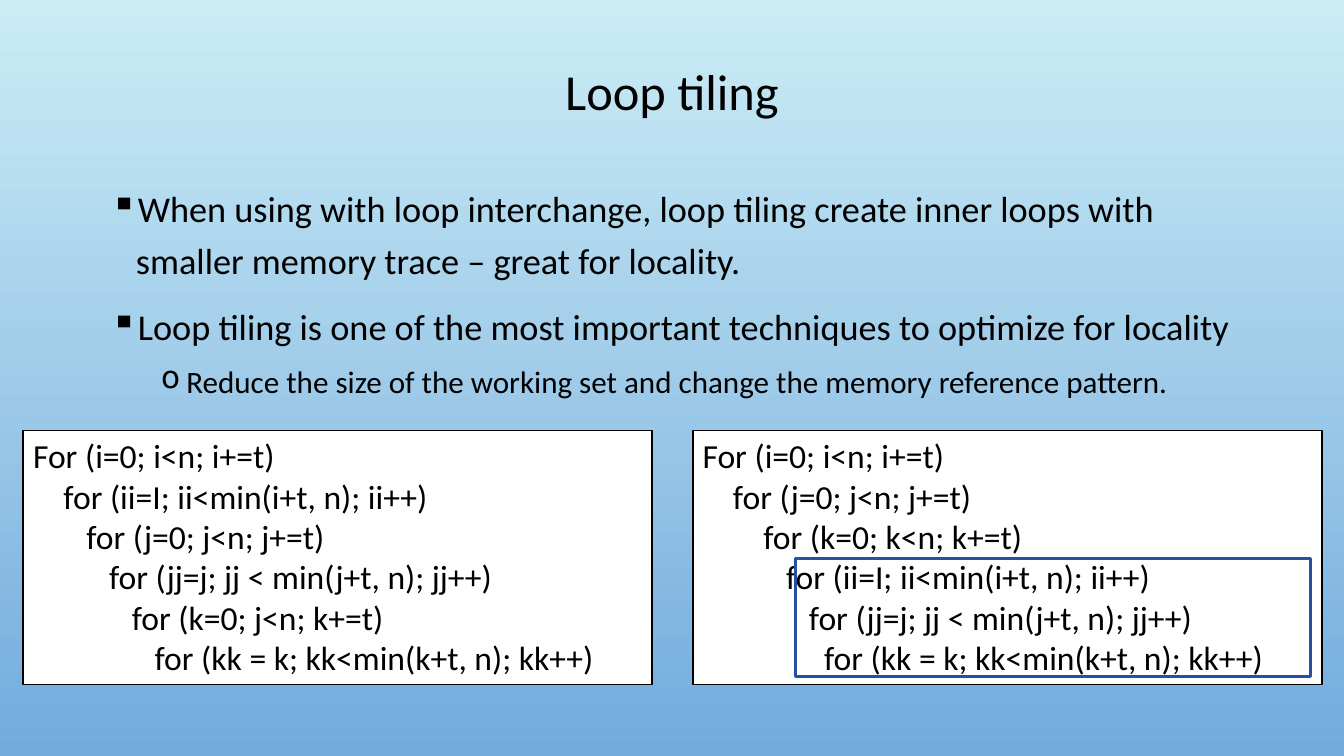
from dataclasses import dataclass

from lxml.etree import SubElement
from pptx import Presentation
from pptx.dml.color import RGBColor
from pptx.enum.shapes import MSO_SHAPE
from pptx.enum.text import MSO_ANCHOR as Anchor, PP_ALIGN as Align
from pptx.oxml.ns import qn
from pptx.slide import Slide
from pptx.util import Inches, Pt

BLACK = RGBColor(0x00, 0x00, 0x00)
WHITE = RGBColor(0xFF, 0xFF, 0xFF)
SKY_TOP = RGBColor(0xCB, 0xEC, 0xF5)
SKY_BOTTOM = RGBColor(0x73, 0xAB, 0xDD)
HIGHLIGHT = RGBColor(0x27, 0x4F, 0xA4)
FONT = "Calibri"


@dataclass(frozen=True)
class Point:
    text: str
    level: int = 0
    size: float = 25.9
    bullet: str = "▪"
    margin: float = 0.25
    space_before: float = 10


@dataclass(frozen=True)
class Listing:
    left: float
    lines: tuple[str, ...]


POINTS = (
    Point("When using with loop interchange, loop tiling create inner loops "
          "with smaller memory trace – great for locality.", space_before=0),
    Point("Loop tiling is one of the most important techniques to optimize "
          "for locality"),
    Point("Reduce the size of the working set and change the memory reference "
          "pattern.", 1, 22.2, "o", 0.75, 5),
)

LISTINGS = (
    Listing(0.23, (
        "For (i=0; i<n; i+=t)",
        "    for (ii=I; ii<min(i+t, n); ii++)",
        "       for (j=0; j<n; j+=t)",
        "          for (jj=j; jj < min(j+t, n); jj++)",
        "             for (k=0; j<n; k+=t)",
        "                for (kk = k; kk<min(k+t, n); kk++)",
    )),
    Listing(6.87, (
        "For (i=0; i<n; i+=t)",
        "    for (j=0; j<n; j+=t)",
        "        for (k=0; k<n; k+=t)",
        "           for (ii=I; ii<min(i+t, n); ii++)",
        "              for (jj=j; jj < min(j+t, n); jj++)",
        "                for (kk = k; kk<min(k+t, n); kk++)",
    )),
)


def set_font(paragraph, size: float) -> None:
    font = paragraph.font
    font.name, font.size = FONT, Pt(size)
    font.color.rgb = BLACK


def add_paragraph(frame, index: int, text: str):
    paragraph = frame.paragraphs[0] if index == 0 else frame.add_paragraph()
    paragraph.text = text
    return paragraph


def add_bullet(paragraph, point: Point) -> None:
    properties = paragraph._p.get_or_add_pPr()
    properties.set("marL", str(Inches(point.margin)))
    properties.set("indent", str(Inches(-0.25)))
    color = SubElement(properties, qn("a:buClr"))
    SubElement(color, qn("a:srgbClr"), val=str(BLACK))
    SubElement(properties, qn("a:buChar"), char=point.bullet)


def add_title(slide: Slide, text: str) -> None:
    box = slide.shapes.add_textbox(
        Inches(1), Inches(0.32), Inches(11.33), Inches(1.23))
    frame = box.text_frame
    frame.word_wrap = True
    frame.vertical_anchor = Anchor.MIDDLE
    title = add_paragraph(frame, 0, text)
    title.alignment = Align.CENTER
    title.line_spacing = 0.9
    set_font(title, 36)


def add_points(slide: Slide, points: tuple[Point, ...]) -> None:
    box = slide.shapes.add_textbox(
        Inches(1), Inches(1.71), Inches(11.33), Inches(2.58))
    frame = box.text_frame
    frame.word_wrap = True
    for index, point in enumerate(points):
        paragraph = add_paragraph(frame, index, point.text)
        paragraph.level = point.level
        add_bullet(paragraph, point)
        paragraph.line_spacing = 1.2
        if point.space_before:
            paragraph.space_before = Pt(point.space_before)
        set_font(paragraph, point.size)


def add_rectangle(slide: Slide, left: float, top: float, width: float,
                  height: float, color: RGBColor, weight: float):
    rectangle = slide.shapes.add_shape(
        MSO_SHAPE.RECTANGLE,
        Inches(left), Inches(top), Inches(width), Inches(height))
    rectangle.shadow.inherit = False
    rectangle.fill.background()
    rectangle.line.color.rgb = color
    rectangle.line.width = Pt(weight)
    return rectangle


def add_listing(slide: Slide, listing: Listing) -> None:
    panel = add_rectangle(slide, listing.left, 4.27, 6.24, 2.52, BLACK, 1.25)
    panel.fill.solid()
    panel.fill.fore_color.rgb = WHITE
    frame = panel.text_frame
    frame.word_wrap = True
    frame.vertical_anchor = Anchor.TOP
    for index, line in enumerate(listing.lines):
        paragraph = add_paragraph(frame, index, line)
        paragraph.alignment = Align.LEFT
        set_font(paragraph, 24)


def main() -> None:
    deck = Presentation()
    deck.slide_width, deck.slide_height = Inches(13.33), Inches(7.5)
    slide = deck.slides.add_slide(deck.slide_layouts[6])

    # Background: light at the top, darker at the bottom
    sky = slide.background.fill
    sky.gradient()
    sky.gradient_angle = 270
    for stop, color in zip(sky.gradient_stops, (SKY_TOP, SKY_BOTTOM)):
        stop.color.rgb = color

    # Title and bullet points
    add_title(slide, "Loop tiling")
    add_points(slide, POINTS)

    # Code before and after the interchange
    for listing in LISTINGS:
        add_listing(slide, listing)

    # Frame around the inner loops
    add_rectangle(slide, 7.89, 5.54, 5.11, 1.17, HIGHLIGHT, 2.25)

    deck.save("out.pptx")


if __name__ == "__main__":
    main()
